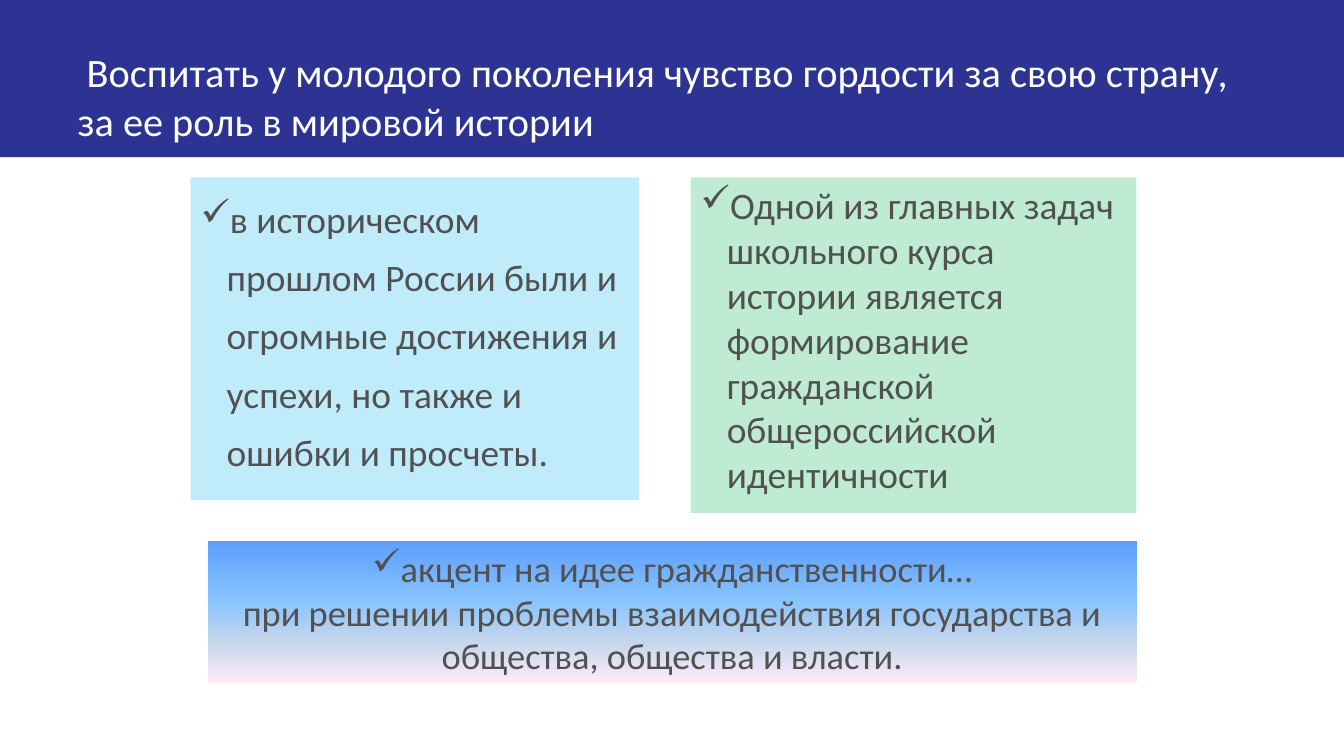
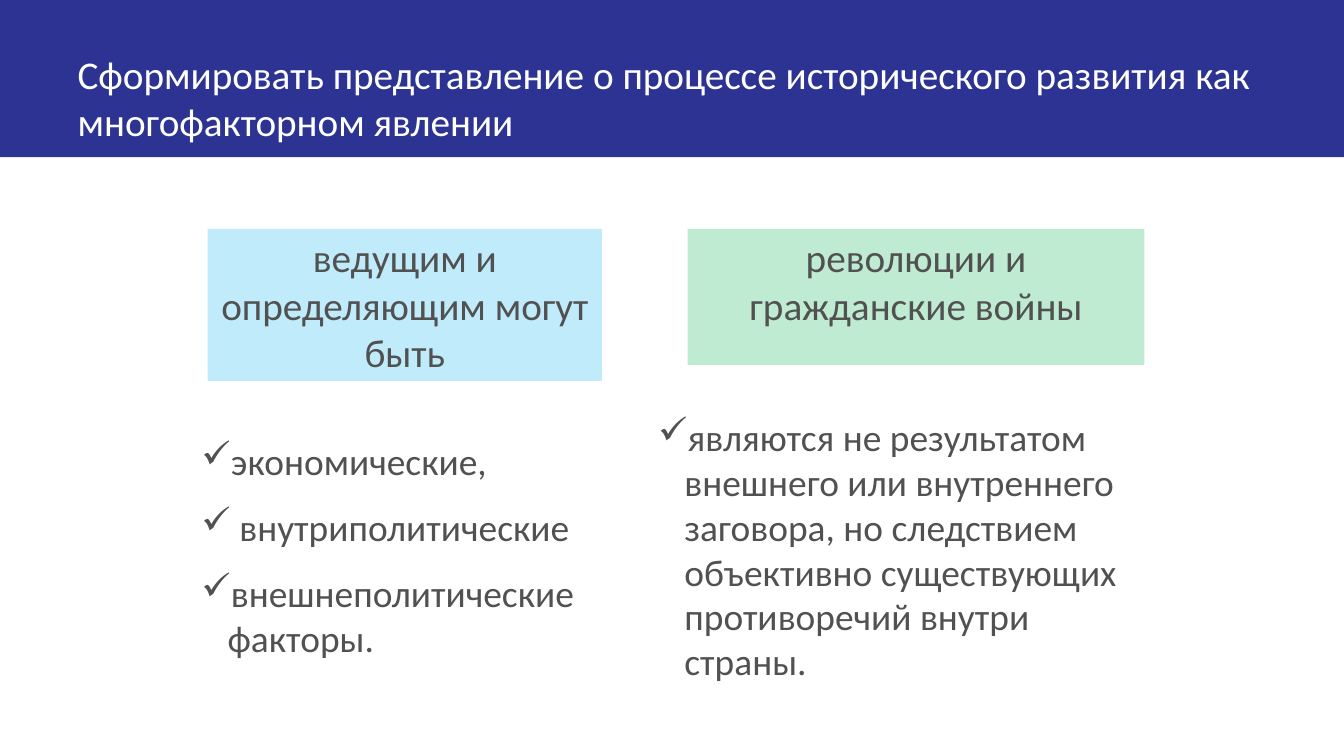
"""Build two slides on the aims of a school history course."""
import lxml.etree
import pptx
import pptx.dml.color
import pptx.enum.shapes
import pptx.enum.text
import pptx.oxml.ns
import pptx.util

Inches = pptx.util.Inches
Pt = pptx.util.Pt
RGB = pptx.dml.color.RGBColor.from_string
qn = pptx.oxml.ns.qn
RECT = pptx.enum.shapes.MSO_SHAPE.RECTANGLE
ALIGN = pptx.enum.text.PP_ALIGN
ANCHOR = pptx.enum.text.MSO_ANCHOR

FONT = "Calibri"
COLORS = {"band": "2C3393", "title": "FFFFFF", "text": "515151",
          "blue": "00B0F0", "green": "00B050"}
STOPS = [(0, "5E9EFF"), (40, "85C2FF"), (70, "C4D6EB"), (100, "FFEBFA")]


def style(para, size, color):
    para.font.name = FONT
    para.font.size = Pt(size)
    para.font.color.rgb = RGB(COLORS[color])


def box(slide, spot, lines, size, fill=None, ticks=0, hang=0, align=ALIGN.LEFT,
        line=1.0, after=0):
    """Add a box of text; the first `ticks` lines get a check mark."""
    place = [Inches(n) for n in spot]
    if fill:
        shape = slide.shapes.add_shape(RECT, *place)
        shape.shadow.inherit = False
        shape.line.fill.background()
    else:
        shape = slide.shapes.add_textbox(*place)
    if fill in COLORS:
        shape.fill.solid()
        shape.fill.fore_color.rgb = RGB(COLORS[fill])
        tone = next(shape.element.spPr.iter(qn("a:srgbClr")))
        lxml.etree.SubElement(tone, qn("a:alpha"), val="25000")
    elif fill == "fade":
        shape.fill.gradient()
        shape.fill.gradient_angle = 270
        stops = next(shape.element.spPr.iter(qn("a:gsLst")))
        for stop in list(stops):
            stops.remove(stop)
        for pos, tone in STOPS:
            stop = lxml.etree.SubElement(stops, qn("a:gs"), pos=str(pos * 1000))
            lxml.etree.SubElement(stop, qn("a:srgbClr"), val=tone)
    frame = shape.text_frame
    frame.word_wrap = True
    frame.vertical_anchor = ANCHOR.TOP
    frame.text = "\n".join(lines)
    for i, para in enumerate(frame.paragraphs):
        para.alignment = align
        para.line_spacing = line
        para.space_after = Pt(after)
        if i < ticks:
            props = para._p.get_or_add_pPr()
            props.set("marL", str(Inches(hang)))
            props.set("indent", str(-Inches(hang)))
            lxml.etree.SubElement(props, qn("a:buChar"), char="✓")
        style(para, size, "text")


deck = pptx.Presentation()
deck.slide_width = Inches(13.33)
deck.slide_height = Inches(7.5)
layout = deck.slide_layouts[5]

titles = [
    (" Воспитать у молодого поколения чувство гордости за свою страну, "
     "за ее роль в мировой истории", 28.8),
    ("Сформировать представление о процессе исторического развития "
     "как многофакторном явлении", 28),
]
slides = []
for text, size in titles:
    slide = deck.slides.add_slide(layout)
    title = slide.shapes.title
    title.left, title.top = Inches(0.67), Inches(0.23)
    title.width, title.height = Inches(12), Inches(1.25)
    frame = title.text_frame
    frame.text = text
    frame.word_wrap = True
    frame.auto_size = pptx.enum.text.MSO_AUTO_SIZE.NONE
    frame.vertical_anchor = ANCHOR.BOTTOM
    para = frame.paragraphs[0]
    para.alignment = ALIGN.LEFT
    style(para, size, "title")
    slides.append(slide)
pride, growth = slides

band = pride.shapes.add_shape(RECT, 0, 0, deck.slide_width, Inches(1.56))
band.shadow.inherit = False
band.fill.solid()
band.fill.fore_color.rgb = RGB(COLORS["band"])
band.line.fill.background()
layout.shapes.element.insert(2, band.element)

box(pride, (1.89, 1.76, 4.45, 3.2),
    ["в историческом прошлом России были и огромные достижения и успехи, "
     "но также и ошибки и просчеты."],
    26.7, "blue", ticks=1, hang=0.26, line=1.3)
box(pride, (6.85, 1.76, 4.42, 3.33),
    ["Одной из главных задач школьного курса истории является формирование "
     "гражданской общероссийской идентичности"],
    26.7, "green", ticks=1, hang=0.26)
box(pride, (2.06, 5.37, 9.22, 1.41),
    ["акцент на идее гражданственности…",
     "при решении проблемы взаимодействия государства и общества, "
     "общества и власти."],
    26, "fade", ticks=1, align=ALIGN.CENTER)

box(growth, (1.9, 4.3, 4.3, 2.89),
    ["экономические,", " внутриполитические", "внешнеполитические факторы."],
    26.7, ticks=3, hang=0.26, after=15)
box(growth, (6.43, 4.06, 4.92, 3.05),
    ["являются не результатом внешнего или внутреннего заговора, но следствием "
     "объективно существующих противоречий внутри страны."],
    26.7, ticks=1, hang=0.26)
box(growth, (2.06, 2.27, 3.91, 1.51), ["ведущим и определяющим могут быть"],
    28, "blue", align=ALIGN.CENTER)
box(growth, (6.82, 2.27, 4.53, 1.35), ["революции и гражданские войны"],
    28, "green", align=ALIGN.CENTER)

deck.save("out.pptx")
